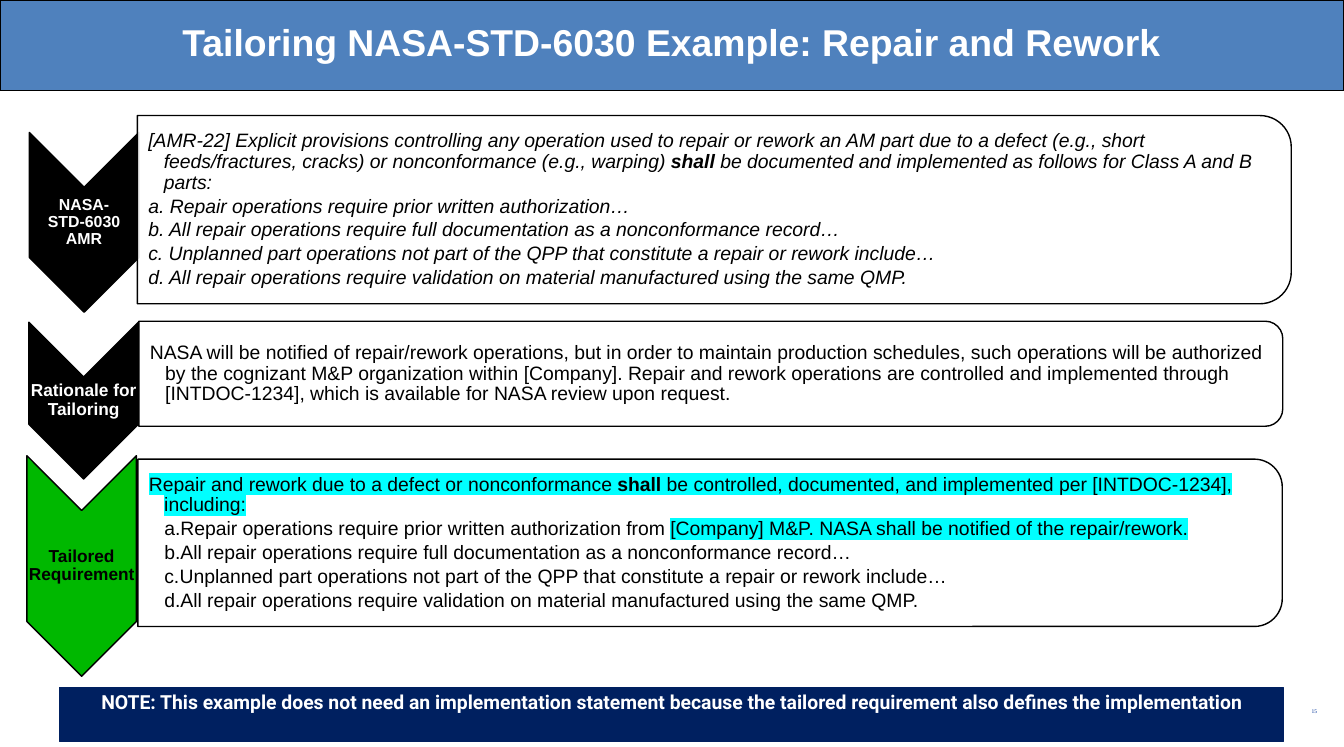
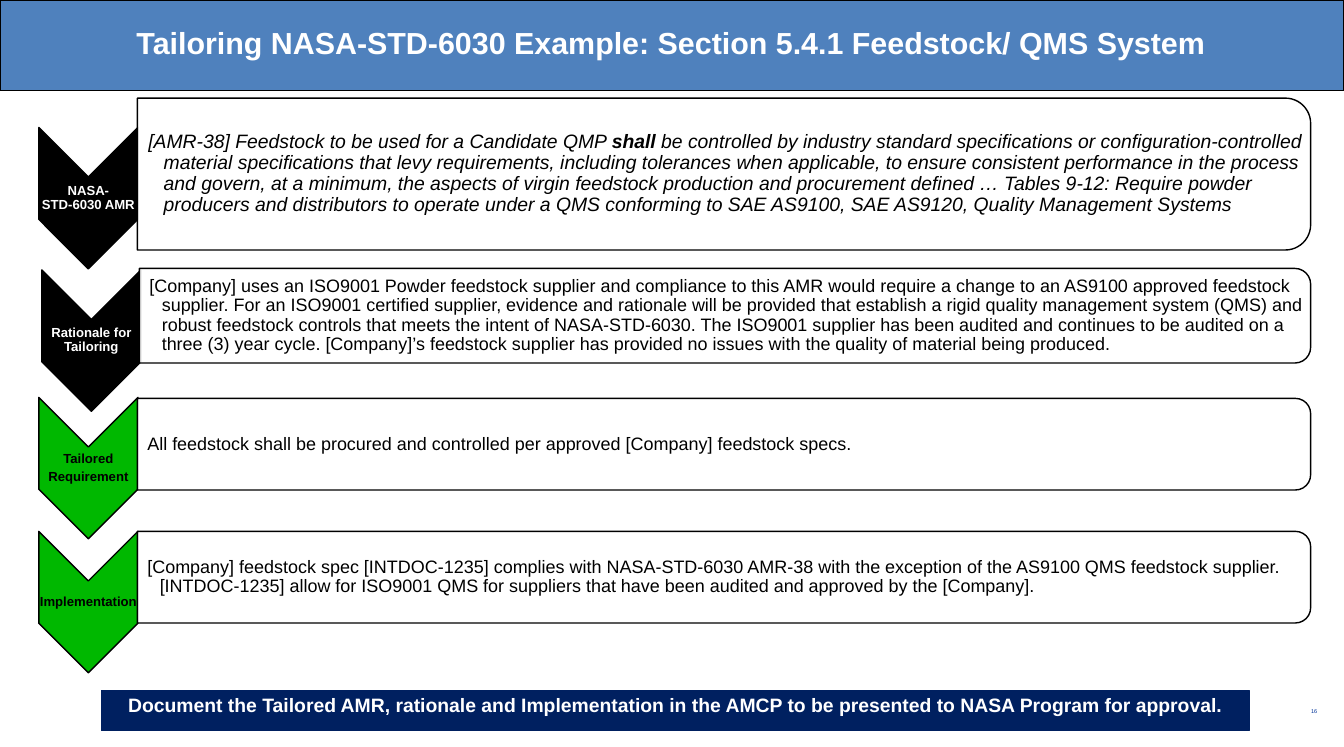
import pptx
import pptx.util
import pptx.dml.color
import pptx.enum.shapes
import pptx.enum.text
import pptx.oxml.ns
from lxml import etree

Inches, Pt = pptx.util.Inches, pptx.util.Pt
SHAPE = pptx.enum.shapes.MSO_SHAPE
ALIGN = pptx.enum.text.PP_ALIGN
ANCHOR = pptx.enum.text.MSO_ANCHOR
qn = pptx.oxml.ns.qn

HUES = {
    "band": "4F81BD", "note": "002060", "mark": "00FFFF", "number": "003399",
    "black": "000000", "white": "FFFFFF", "green": "00B800",
}
CORNER = 0.0488  # inset of the text in a rounded card, as a share of its height

STEPS = [
    "All repair operations require full documentation as a nonconformance record…",
    "Unplanned part operations not part of the QPP that constitute a repair or rework include…",
    "All repair operations require validation on material manufactured using the same QMP.",
]
REPAIR = [
    [("[AMR-22] Explicit provisions controlling any operation used to repair or rework an AM part "
      "due to a defect (e.g., short feeds/fractures, cracks) or nonconformance (e.g., warping) ", "i"),
     ("shall ", "ib"),
     ("be documented and implemented as follows for Class A and B parts:", "i")],
    [("a. Repair operations require prior written authorization…", "i")],
] + [[(f"{mark}. {step}", "i")] for mark, step in zip("bcd", STEPS)]
NOTICE = [[(
    "NASA will be notified of repair/rework operations, but in order to maintain production "
    "schedules, such operations will be authorized by the cognizant M&P organization within "
    "[Company]. Repair and rework operations are controlled and implemented through "
    "[INTDOC-1234], which is available for NASA review upon request.", "")]]
TAILOR = [[
    ("Repair and rework due to a defect or nonconformance ", "h"),
    ("shall", "hb"),
    (" be controlled, documented, and implemented per [INTDOC-1234], including:", "h"),
]]
LIST = [[
    ("Repair operations require prior written authorization from ", ""),
    ("[Company] M&P. NASA shall be notified of the repair/rework.", "h"),
]] + [[(step, "")] for step in STEPS]
FEED = [[
    ("[AMR-38] Feedstock to be used for a Candidate QMP ", "i"),
    ("shall", "ib"),
    (" be controlled by industry standard specifications or configuration-controlled material "
     "specifications that levy requirements, including tolerances when applicable, to ensure "
     "consistent performance in the process and govern, at a minimum, the aspects of virgin "
     "feedstock production and procurement defined … Tables 9-12: Require powder producers and "
     "distributors to operate under a QMS conforming to SAE AS9100, SAE AS9120, Quality "
     "Management Systems", "i"),
]]
AUDIT = [[(
    "[Company] uses an ISO9001 Powder feedstock supplier and compliance to this AMR would require "
    "a change to an AS9100 approved feedstock supplier. For an ISO9001 certified supplier, "
    "evidence and rationale will be provided that establish a rigid quality management system "
    "(QMS) and robust feedstock controls that meets the intent of NASA-STD-6030. The ISO9001 "
    "supplier has been audited and continues to be audited on a three (3) year cycle. [Company]’s "
    "feedstock supplier has provided no issues with the quality of material being produced.", "")]]
SPECS = [[(
    "All feedstock shall be procured and controlled per approved [Company] feedstock specs.", "")]]
COMPLY = [[(
    "[Company] feedstock spec [INTDOC-1235] complies with NASA-STD-6030 AMR-38 with the exception "
    "of the AS9100 QMS feedstock supplier. [INTDOC-1235] allow for ISO9001 QMS for suppliers that "
    "have been audited and approved by the [Company].", "")]]


def color(name):
    return pptx.dml.color.RGBColor.from_string(HUES[name])


def add_run(para, text, size, hue, flags="", face="Arial"):
    """Flags: b bold, i italic, h highlighted."""
    run = para.add_run()
    run.text = text
    font = run.font
    font.size, font.name = Pt(size), face
    font.bold, font.italic = "b" in flags, "i" in flags
    font.color.rgb = color(hue)
    if "h" in flags:
        mark = etree.Element(qn("a:highlight"))
        etree.SubElement(mark, qn("a:srgbClr"), val=HUES["mark"])
        run._r.get_or_add_rPr().find(qn("a:solidFill")).addnext(mark)


def set_frame(frame, anchor, left=0.1, side=0.1, edge=0.05):
    frame.word_wrap = True
    frame.vertical_anchor = anchor
    frame.margin_left, frame.margin_right = Inches(left), Inches(side)
    frame.margin_top = frame.margin_bottom = Inches(edge)
    return frame


def add_text(slide, box, anchor, *insets):
    shape = slide.shapes.add_textbox(*map(Inches, box))
    return set_frame(shape.text_frame, anchor, *insets)


def next_para(frame, first):
    return frame.paragraphs[0] if first else frame.add_paragraph()


def space(para, size, share):
    para.line_spacing = 0.9
    para.space_after = Pt(round(size * share, 1))


def add_box(slide, kind, box, fill, line="black", width=2):
    shape = slide.shapes.add_shape(kind, *map(Inches, box))
    shape.shadow.inherit = False
    shape.fill.solid()
    shape.fill.fore_color.rgb = color(fill)
    shape.line.color.rgb = color(line)
    shape.line.width = Pt(width)
    return shape


def add_turned(slide, kind, box, fill):
    """Fill the box with a shape turned clockwise by a quarter."""
    x, y, w, h = box
    shape = add_box(slide, kind, (x + (w - h) / 2, y + (h - w) / 2, h, w), fill)
    shape.rotation = 90
    return shape


def add_arrow(slide, box, fill, lines, size):
    x, y, w, h = box
    add_turned(slide, SHAPE.CHEVRON, box, fill)
    pad = 0.02 if size > 20 else 0.01
    frame = add_text(slide, (x, y + w / 2, w, h - w), ANCHOR.MIDDLE, pad, pad, pad)
    for i, line in enumerate(lines):
        para = next_para(frame, i == 0)
        para.alignment = ALIGN.CENTER
        space(para, size, 0.35)
        add_run(para, line, size, "white" if fill == "black" else "black", "b")


def add_card(slide, box, paras, size, items=()):
    """Draw a rounded card with hanging paragraphs, then lettered items."""
    x, y, w, h = box
    card = add_turned(slide, SHAPE.ROUND_2_SAME_RECTANGLE, box, "white")
    shade = card.fill._xPr.find(qn("a:solidFill"))[0]
    etree.SubElement(shade, qn("a:alpha"), val="90000")
    pad = h * CORNER
    left, hang = (0.22, 0.31) if size == 28 else (0.2, 0.25)
    frame = add_text(slide, (x, y + pad, w - pad, h - 2 * pad), ANCHOR.MIDDLE, left, 0.02, 0.02)
    for i, runs in enumerate([*paras, *items]):
        para = next_para(frame, i == 0)
        props = para._p.get_or_add_pPr()
        level = 2 if i >= len(paras) else 1
        props.set("marL", str(Inches(hang * level)))
        props.set("indent", str(Inches(-hang)))
        if level == 2:
            etree.SubElement(props, qn("a:buFont"), typeface="+mj-lt")
            etree.SubElement(props, qn("a:buAutoNum"), type="alphaLcPeriod")
        space(para, size, 0.15)
        for text, flags in runs:
            add_run(para, text, size, "black", flags)


def add_page(deck, title, size, number, face):
    """Start a slide with its title band and slide number."""
    slide = deck.slides.add_slide(deck.slide_layouts[6])
    add_box(slide, SHAPE.RECTANGLE, (0, 0, 27, 1.82), "band")
    para = add_text(slide, (1.88, 0.1, 23.23, 1.48), ANCHOR.MIDDLE).paragraphs[0]
    para.alignment = ALIGN.CENTER
    add_run(para, title, size, "white", "b")
    para = add_text(slide, (20.94, 14.17, 5.62, 0.5), ANCHOR.TOP).paragraphs[0]
    para.alignment = ALIGN.RIGHT
    add_run(para, number, 8, "number", face=face)
    return slide


def add_note(slide, box, text, face="Arial"):
    bar = add_box(slide, SHAPE.RECTANGLE, box, "note", "note", 1)
    para = set_frame(bar.text_frame, ANCHOR.TOP).paragraphs[0]
    para.alignment = ALIGN.CENTER
    add_run(para, text, 28, "white", "b", face)


def add_repair(deck):
    slide = add_page(deck, "Tailoring NASA-STD-6030 Example: Repair and Rework", 54, "15",
                     "Times New Roman")
    rows = [
        ((0.59, 2.66, 2.2, 3.61), "black", "NASA-STD-6030 AMR", 23,
         (2.76, 2.32, 23.18, 3.78), REPAIR, ()),
        ((0.58, 6.47, 2.2, 3.15), "black", "Rationale for Tailoring", 25,
         (2.79, 6.45, 22.98, 2.11), NOTICE, ()),
        ((0.54, 9.15, 2.2, 4.43), "green", "Tailored Requirement", 25,
         (2.77, 9.22, 22.99, 3.36), TAILOR, LIST),
    ]
    for spot, fill, label, size, box, paras, items in rows:
        add_arrow(slide, spot, fill, [label], size)
        add_card(slide, box, paras, 28, items)
    add_note(slide, (1.19, 13.81, 24.6, 1.08),
             "NOTE: This example does not need an implementation statement because the tailored "
             "requirement also defines the implementation", "Roboto")


def add_feed(deck):
    slide = add_page(deck, "Tailoring NASA-STD-6030 Example: Section 5.4.1 Feedstock/ QMS System",
                     44, "16", "Arial")
    rows = [
        (0.78, 2.56, "black", ["NASA-STD-6030 AMR"], (2.76, 1.97, 23.57, 3.05), FEED, 28),
        (0.84, 5.42, "black", ["Rationale for Tailoring"], (2.8, 5.39, 23.53, 1.9), AUDIT, 26),
        (0.78, 7.98, "green", ["Tailored", "Requirement"], (2.76, 8, 23.57, 1.84), SPECS, 26),
        (0.78, 10.67, "green", ["Implementation"], (2.76, 10.67, 23.57, 1.84), COMPLY, 26),
    ]
    for x, y, fill, lines, box, paras, size in rows:
        add_arrow(slide, (x, y, 1.99, 2.84), fill, lines, 19)
        add_card(slide, box, paras, size)
    add_note(slide, (2.03, 13.87, 23.06, 0.8),
             "Document the Tailored AMR, rationale and Implementation in the AMCP to be presented "
             "to NASA Program for approval.")


def main():
    deck = pptx.Presentation()
    deck.slide_width, deck.slide_height = Inches(27), Inches(15)
    add_repair(deck)
    add_feed(deck)
    deck.save("out.pptx")


if __name__ == "__main__":
    main()
